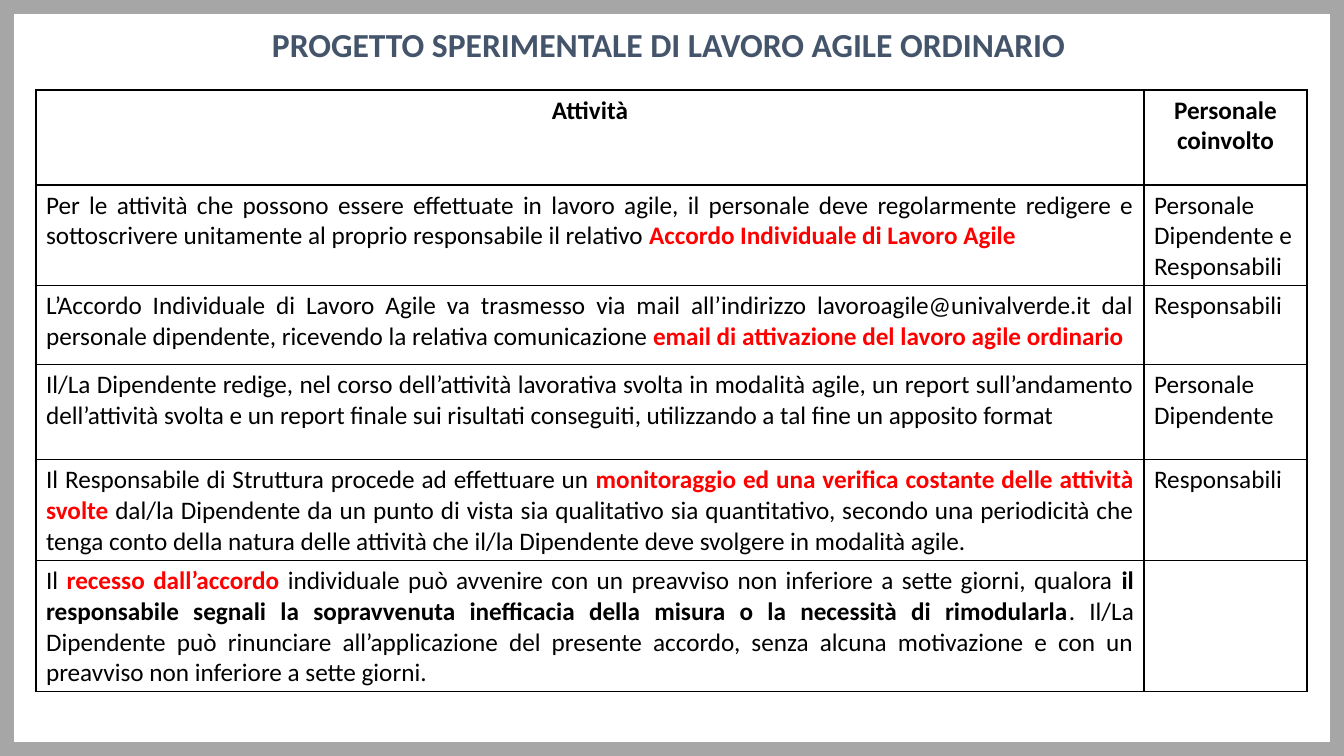
from lxml import etree
from pptx import Presentation
from pptx import util as u
from pptx.dml.color import RGBColor
from pptx.enum import shapes, text
from pptx.oxml.ns import qn

PX = 914400 / 100.8
FONT = "Calibri"
COLORS = {"white": "FFFFFF", "frame": "A6A6A6", "title": "44546A",
          "black": "000000", "red": "FF0000"}
# run style: (colour, bold)
PLAIN, BOLD, KEY = ("black", False), ("black", True), ("red", True)


def px(n):
    return u.Emu(round(n * PX))


def add_run(p, words, size, color, bold):
    r = p.add_run()
    r.text = words
    r.font.name = FONT
    r.font.size = u.Pt(size)
    r.font.bold = bold
    r.font.color.rgb = RGBColor.from_string(COLORS[color])


prs = Presentation()
prs.slide_width, prs.slide_height = px(1344), px(756)
s = prs.slides.add_slide(prs.slide_layouts[6])

# Page frame
frame = s.shapes.add_shape(shapes.MSO_SHAPE.RECTANGLE, 0, 0, px(1344), px(756))
frame.shadow.inherit = False
frame.fill.solid()
frame.fill.fore_color.rgb = RGBColor.from_string(COLORS["white"])
frame.line.color.rgb = RGBColor.from_string(COLORS["frame"])
frame.line.width = u.Pt(20)

# Title
title = s.shapes.add_textbox(px(262), px(19), px(820), px(50))
tf = title.text_frame
tf.word_wrap = False
tf.auto_size = text.MSO_AUTO_SIZE.SHAPE_TO_FIT_TEXT
add_run(tf.paragraphs[0], "PROGETTO SPERIMENTALE DI LAVORO AGILE ORDINARIO", 24, "title", True)

# Activities table: (row height, activity runs, staff runs)
ROWS = [
    (95, [("Attività", BOLD)], [("Personale coinvolto", BOLD)]),
    (98, [("Per le attività che possono essere effettuate in lavoro agile, il personale deve "
           "regolarmente redigere e sottoscrivere unitamente al proprio responsabile il relativo ", PLAIN),
          ("Accordo Individuale di Lavoro Agile", KEY)],
     [("Personale Dipendente e Responsabili", PLAIN)]),
    (79, [("L’Accordo Individuale di Lavoro Agile va trasmesso via mail all’indirizzo "
           "lavoroagile@univalverde.it dal personale dipendente, ricevendo la relativa comunicazione ", PLAIN),
          ("email di attivazione del lavoro agile ordinario", KEY)],
     [("Responsabili", PLAIN)]),
    (95, [("Il/La Dipendente redige, nel corso dell’attività lavorativa svolta in modalità agile, "
           "un report sull’andamento dell’attività svolta e un report finale sui risultati conseguiti, "
           "utilizzando a tal fine un apposito format", PLAIN)],
     [("Personale Dipendente", PLAIN)]),
    (98, [("Il Responsabile di Struttura procede ad effettuare un ", PLAIN),
          ("monitoraggio ed una verifica costante delle attività svolte", KEY),
          (" dal/la Dipendente da un punto di vista sia qualitativo sia quantitativo, secondo una "
           "periodicità che tenga conto della natura delle attività che il/la Dipendente deve "
           "svolgere in modalità agile.", PLAIN)],
     [("Responsabili", PLAIN)]),
    (128, [("Il ", PLAIN),
           ("recesso dall’accordo ", KEY),
           ("individuale può avvenire con un preavviso non inferiore a sette giorni, qualora ", PLAIN),
           ("il responsabile segnali la sopravvenuta inefficacia della misura o la necessità "
            "di rimodularla", BOLD),
           (". Il/La Dipendente può rinunciare all’applicazione del presente accordo, senza alcuna "
            "motivazione e con un preavviso non inferiore a sette giorni.", PLAIN)],
     []),
]
COL_WIDTHS = [1108, 163]
BODY_ALIGN = [text.PP_ALIGN.JUSTIFY, text.PP_ALIGN.LEFT]

table = s.shapes.add_table(len(ROWS), len(COL_WIDTHS), px(36), px(90), px(sum(COL_WIDTHS)),
                           px(sum(row[0] for row in ROWS))).table
table.first_row = table.horz_banding = False
for col, width in zip(table.columns, COL_WIDTHS):
    col.width = px(width)

for i, (height, *cells) in enumerate(ROWS):
    table.rows[i].height = px(height)
    for j, runs in enumerate(cells):
        cell = table.cell(i, j)
        p = cell.text_frame.paragraphs[0]
        p.alignment = text.PP_ALIGN.CENTER if i == 0 else BODY_ALIGN[j]
        for words, style in runs:
            add_run(p, words, 18, *style)
        tc_pr = cell._tc.get_or_add_tcPr()
        for side in ("lnL", "lnR", "lnT", "lnB"):
            ln = etree.SubElement(tc_pr, qn(f"a:{side}"), w=str(u.Pt(1)))
            fill = etree.SubElement(ln, qn("a:solidFill"))
            etree.SubElement(fill, qn("a:srgbClr"), val=COLORS["black"])
        cell.fill.background()

prs.save("out.pptx")
